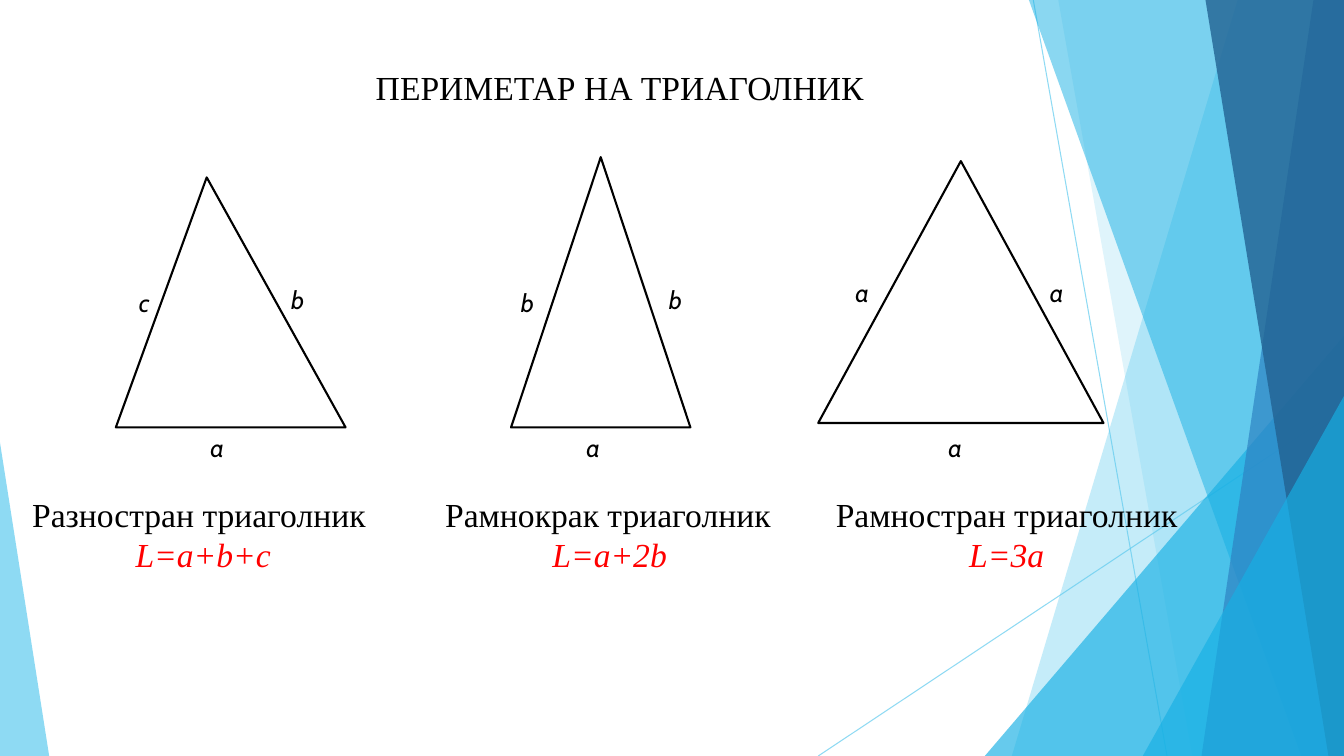
from dataclasses import dataclass

from lxml import etree
from pptx import Presentation
from pptx.dml.color import RGBColor
from pptx.enum.shapes import MSO_CONNECTOR, MSO_SHAPE
from pptx.enum.text import PP_ALIGN
from pptx.oxml.ns import qn
from pptx.util import Cm, Pt

TRIANGLE = MSO_SHAPE.ISOSCELES_TRIANGLE
STRAIGHT = MSO_CONNECTOR.STRAIGHT
LEFT, CENTER = PP_ALIGN.LEFT, PP_ALIGN.CENTER
WIDTH, HEIGHT = 33.87, 19.05


@dataclass(frozen=True)
class Theme:
    sky: str = "5FCBEF"
    cyan: str = "17B0E4"
    blue: str = "2E83C3"
    navy: str = "226292"
    white: str = "FFFFFF"
    black: str = "000000"
    red: str = "FF0000"
    serif: str = "Times New Roman"
    sans: str = "Cabin"
    heading: int = 24
    label: int = 18
    hairline: float = 0.75
    outline: float = 1.5


THEME = Theme()


def set_alpha(s, percent):
    """Make every colour of a shape or connector partly transparent."""
    for color in s._element.spPr.iter(qn("a:srgbClr")):
        etree.SubElement(color, qn("a:alpha"), val=str(percent * 1000))


def style(sp, fill, alpha=100, outlined=False):
    sp.shadow.inherit = False
    sp.fill.solid()
    sp.fill.fore_color.rgb = RGBColor.from_string(fill)
    if outlined:
        sp.line.color.rgb = RGBColor.from_string(THEME.black)
        sp.line.width = Pt(THEME.outline)
    else:
        sp.line.fill.background()
    if alpha < 100:
        set_alpha(sp, alpha)


def add_polygon(s, points, fill, **look):
    start, *rest = [(Cm(x), Cm(y)) for x, y in points]
    builder = s.shapes.build_freeform(*start)
    builder.add_line_segments(rest, close=True)
    style(builder.convert_to_shape(), fill, **look)


def add_triangle(s, x, y, w, h, fill, apex=0.5, **look):
    sp = s.shapes.add_shape(TRIANGLE, Cm(x), Cm(y), Cm(w), Cm(h))
    sp.adjustments[0] = apex
    style(sp, fill, **look)


def add_ray(s, x1, y1, x2, y2):
    ray = s.shapes.add_connector(STRAIGHT, Cm(x1), Cm(y1), Cm(x2), Cm(y2))
    ray.line.color.rgb = RGBColor.from_string(THEME.sky)
    ray.line.width = Pt(THEME.hairline)
    set_alpha(ray, 70)
    etree.SubElement(ray._element.spPr, qn("a:effectLst"))


def add_run(p, text, *, size=THEME.heading, font=THEME.serif,
            color=THEME.black, italic=False, align=LEFT):
    p.alignment = align
    r = p.add_run()
    r.text = text
    r.font.size = Pt(size)
    r.font.name = font
    r.font.italic = italic
    r.font.color.rgb = RGBColor.from_string(color)


def add_text_box(s, x, y, w, h):
    tf = s.shapes.add_textbox(Cm(x), Cm(y), Cm(w), Cm(h)).text_frame
    tf.word_wrap = True
    return tf


def add_side_label(s, text, x, y, w):
    tf = add_text_box(s, x, y, w, 1.02)
    add_run(tf.paragraphs[0], text, size=THEME.label, font=THEME.sans, italic=True)


def add_caption(s, name, formula, x, w, align):
    tf = add_text_box(s, x, 12.32, w, 2.31)
    add_run(tf.paragraphs[0], name, align=align)
    add_run(tf.add_paragraph(), formula, color=THEME.red, italic=True, align=CENTER)


def add_facet(s, top, bottom, fill, alpha):
    """Fill from a slanted left edge to the right edge of the slide."""
    points = [(top, 0), (WIDTH, 0), (WIDTH, HEIGHT), (bottom, HEIGHT)]
    add_polygon(s, points, fill, alpha=alpha)


def add_corner(s, x, y):
    """Triangle that fills the bottom right corner of the slide."""
    add_triangle(s, x, y, WIDTH - x, HEIGHT - y, THEME.cyan, apex=1, alpha=66)


def add_background(s):
    add_ray(s, 26.04, 0, 29.41, HEIGHT)
    add_ray(s, WIDTH, 10.24, 20.62, HEIGHT)
    add_facet(s, 31.19, 25.5, THEME.sky, 36)
    add_facet(s, 26.67, 30.05, THEME.sky, 20)
    add_corner(s, 24.82, 8.46)
    add_facet(s, 25.93, 32.79, THEME.cyan, 50)
    add_facet(s, 33.1, 30.28, THEME.blue, 70)
    add_facet(s, 30.38, 33.48, THEME.navy, 80)
    add_corner(s, 28.8, 9.98)
    add_triangle(s, 0, 11.15, 1.24, HEIGHT - 11.15, THEME.sky, apex=0, alpha=70)


def main():
    prs = Presentation()
    prs.slide_width, prs.slide_height = Cm(WIDTH), Cm(HEIGHT)
    s = prs.slides.add_slide(prs.slide_layouts[6])
    add_background(s)

    # Title
    tf = add_text_box(s, 9.22, 1.55, 13.1, 1.27)
    add_run(tf.paragraphs[0], "ПЕРИМЕТАР НА ТРИАГОЛНИК")

    # Scalene, isosceles and equilateral triangles
    add_polygon(s, [(2.92, 10.77), (5.21, 4.47), (8.71, 10.77)],
                THEME.white, outlined=True)
    add_triangle(s, 12.88, 3.96, 4.52, 6.81, THEME.white, outlined=True)
    add_triangle(s, 20.62, 4.06, 7.19, 6.6, THEME.white, outlined=True)

    # Side labels: text, left, top, width
    for label in (
        ("a", 5.05, 10.77, 1.09), ("b", 7.09, 7.04, 1.02), ("c", 3.25, 7.11, 0.71),
        ("a", 14.53, 10.77, 1.27), ("b", 16.61, 7.04, 0.81), ("b", 12.88, 7.11, 0.61),
        ("a", 23.65, 10.77, 1.14), ("a", 26.21, 6.86, 1.22), ("a", 21.31, 6.86, 0.97),
    ):
        add_side_label(s, *label)

    # Captions: name, formula, left, width, alignment of the name
    for caption in (
        ("Разностран триаголник", "L=a+b+c", 0.56, 9.12, LEFT),
        ("Рамнокрак триаголник", "L=a+2b", 10.97, 8.79, LEFT),
        ("Рамностран триаголник", "L=3a", 20.62, 9.5, CENTER),
    ):
        add_caption(s, *caption)

    prs.save("out.pptx")


if __name__ == "__main__":
    main()
